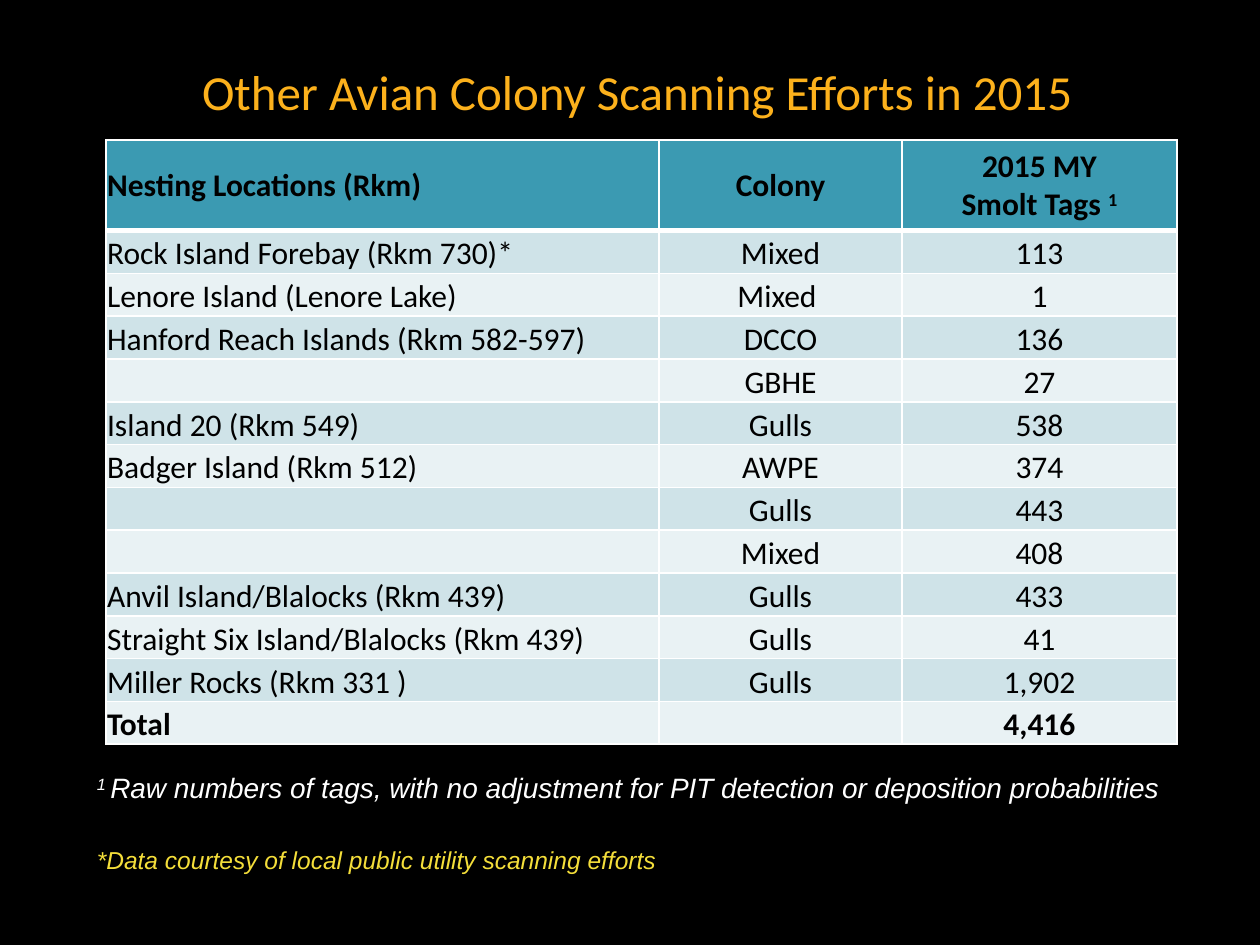
from typing import NamedTuple

from lxml import etree
from pptx import Presentation
from pptx.dml.color import RGBColor
from pptx.enum.text import MSO_ANCHOR, PP_ALIGN
from pptx.oxml.ns import qn
from pptx.util import Inches, Pt

LEFT, CENTER = PP_ALIGN.LEFT, PP_ALIGN.CENTER
MIDDLE, BOTTOM = MSO_ANCHOR.MIDDLE, MSO_ANCHOR.BOTTOM

BLACK = RGBColor(0x00, 0x00, 0x00)
WHITE = RGBColor(0xFF, 0xFF, 0xFF)
ORANGE = RGBColor(0xFC, 0xB1, 0x1C)
YELLOW = RGBColor(0xF4, 0xDE, 0x3A)
TEAL = RGBColor(0x3B, 0x9A, 0xB2)
BAND_DARK = RGBColor(0xCF, 0xE3, 0xE8)
BAND_LIGHT = RGBColor(0xE9, 0xF2, 0xF4)

TITLE_ONLY = 5
COLUMN_WIDTHS = (4.39, 1.93, 2.18)
HEADER_HEIGHT, ROW_HEIGHT = 0.72, 0.34


class TableRow(NamedTuple):
    location: str
    colony: str
    tags: str


class Style(NamedTuple):
    font: str
    size: int
    color: RGBColor
    bold: bool = False
    italic: bool = False


HEADER = TableRow("Nesting Locations (Rkm)", "Colony", "2015 MY\nSmolt Tags ")
COUNTS = (
    TableRow("Rock Island Forebay (Rkm 730)*", "Mixed", "113"),
    TableRow("Lenore Island (Lenore Lake)", "Mixed ", "1"),
    TableRow("Hanford Reach Islands (Rkm 582-597)", "DCCO", "136"),
    TableRow("", "GBHE", "27"),
    TableRow("Island 20 (Rkm 549)", "Gulls", "538"),
    TableRow("Badger Island (Rkm 512)", "AWPE", "374"),
    TableRow("", "Gulls", "443"),
    TableRow("", "Mixed", "408"),
    TableRow("Anvil Island/Blalocks (Rkm 439)", "Gulls", "433"),
    TableRow("Straight Six Island/Blalocks (Rkm 439)", "Gulls", "41"),
    TableRow("Miller Rocks (Rkm 331 )", "Gulls", "1,902"),
)
TOTAL = TableRow("Total", "", "4,416")
ROWS = (HEADER, *COUNTS, TOTAL)


def format_text(text_frame, style: Style, alignment=LEFT) -> None:
    for paragraph in text_frame.paragraphs:
        paragraph.alignment = alignment
        for run in paragraph.runs:
            font = run.font
            font.name, font.size = style.font, Pt(style.size)
            font.bold, font.italic = style.bold, style.italic
            font.color.rgb = style.color


def raise_run(run) -> None:
    run._r.get_or_add_rPr().set("baseline", "30000")


def set_border(cell, side: str, points: int) -> None:
    properties = cell._tc.get_or_add_tcPr()
    line = etree.SubElement(properties, qn(f"a:ln{side}"), w=str(Pt(points)))
    fill = etree.SubElement(line, qn("a:solidFill"))
    etree.SubElement(fill, qn("a:srgbClr"), val=str(WHITE))


def fill_cell(cell, text: str, row: int, column: int) -> None:
    is_header = row == 0
    bold = row in (0, len(ROWS) - 1)
    cell.margin_left = cell.margin_right = cell.margin_top = Inches(0.01)
    cell.margin_bottom = 0
    cell.vertical_anchor = MIDDLE if is_header else BOTTOM
    # The rule below the header is thicker than the others
    widths = {"L": 1, "R": 1, "T": 3 if row == 1 else 1, "B": 3 if is_header else 1}
    for side, points in widths.items():
        set_border(cell, side, points)
    cell.fill.solid()
    band = BAND_DARK if row % 2 else BAND_LIGHT
    cell.fill.fore_color.rgb = TEAL if is_header else band
    cell.text_frame.text = text
    if is_header and column == 2:
        footnote_mark = cell.text_frame.paragraphs[-1].add_run()
        footnote_mark.text = "1"
        raise_run(footnote_mark)
    format_text(cell.text_frame, Style("Calibri", 18, BLACK, bold),
                CENTER if column else LEFT)


def add_tags_table(slide) -> None:
    height = HEADER_HEIGHT + ROW_HEIGHT * (len(ROWS) - 1)
    table = slide.shapes.add_table(
        len(ROWS), len(COLUMN_WIDTHS), Inches(0.84), Inches(1.11),
        Inches(sum(COLUMN_WIDTHS)), Inches(height)).table
    for column, width in zip(table.columns, COLUMN_WIDTHS):
        column.width = Inches(width)
    for row_index, values in enumerate(ROWS):
        table.rows[row_index].height = Inches(ROW_HEIGHT if row_index else HEADER_HEIGHT)
        for column_index, text in enumerate(values):
            fill_cell(table.cell(row_index, column_index), text, row_index, column_index)


def add_note(slide, top: float, width: float, height: float,
             texts: tuple[str, ...], style: Style):
    box = slide.shapes.add_textbox(Inches(0.67), Inches(top), Inches(width), Inches(height))
    box.text_frame.word_wrap = True
    paragraph = box.text_frame.paragraphs[0]
    for text in texts:
        paragraph.add_run().text = text
    format_text(box.text_frame, style)
    return paragraph


def main() -> None:
    presentation = Presentation()
    presentation.slide_width, presentation.slide_height = Inches(10), Inches(7.5)
    slide = presentation.slides.add_slide(presentation.slide_layouts[TITLE_ONLY])
    slide.background.fill.solid()
    slide.background.fill.fore_color.rgb = BLACK

    # Title
    title = slide.shapes.title
    title.left, title.top = Inches(0.64), Inches(0.33)
    title.width, title.height = Inches(8.92), Inches(0.78)
    title.text_frame.text = "Other Avian Colony Scanning Efforts in 2015 "
    title.text_frame.vertical_anchor = MIDDLE
    format_text(title.text_frame, Style("Calibri", 28, ORANGE), CENTER)

    # Tag counts by nesting location
    add_tags_table(slide)

    # Footnotes
    footnote = add_note(
        slide, 6.07, 9.16, 0.37,
        ("1 ", "Raw numbers of tags, with no adjustment for PIT detection "
               "or deposition probabilities"),
        Style("Arial", 16, WHITE, italic=True))
    raise_run(footnote.runs[0])
    add_note(slide, 6.66, 8.5, 0.34,
             ("*Data courtesy of local public utility scanning efforts",),
             Style("Arial", 14, YELLOW, italic=True))

    presentation.save("out.pptx")


if __name__ == "__main__":
    main()
